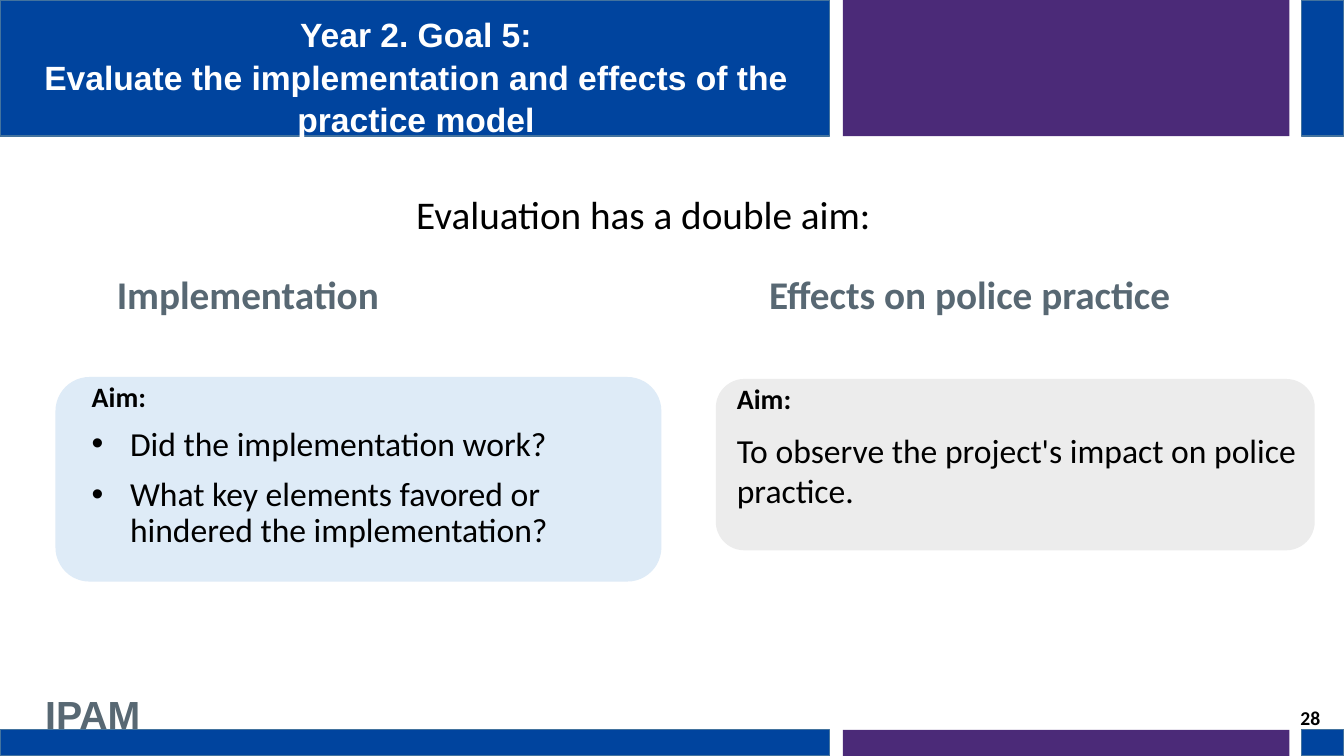
from dataclasses import dataclass

from lxml import etree
from pptx import Presentation, util as u
from pptx.dml import color
from pptx.enum import shapes, text
from pptx.oxml import ns

PX = 9144  # EMU in one px, at 100 px to the inch


@dataclass(frozen=True)
class Theme:
    blue: str = "00449E"
    edge: str = "43739E"
    plum: str = "4B2A78"
    slate: str = "586873"
    pale: str = "DEEBF7"
    grey: str = "ECECEC"
    black: str = "000000"
    white: str = "FFFFFF"
    sans: str = "Arial"
    main: str = "Calibri"
    head: int = 28
    large: int = 24
    label: int = 20
    small: int = 14


def apply(item, values):
    for name, value in values.items():
        setattr(item, name, value)


def rgb(code):
    return color.RGBColor.from_string(code)


class Deck:
    def __init__(self, theme):
        self.theme = theme
        self.file = Presentation()
        apply(self.file, {"slide_width": 1333 * PX, "slide_height": 750 * PX})
        self.slide = self.file.slides.add_slide(self.file.slide_layouts[1])

    def block(self, box, fill, edge=None, kind=shapes.MSO_SHAPE.RECTANGLE):
        shape = self.slide.shapes.add_shape(kind, *(n * PX for n in box))
        shape.shadow.inherit = False
        shape.fill.solid()
        shape.fill.fore_color.rgb = rgb(fill)
        if edge:
            shape.line.color.rgb = rgb(edge)
            shape.line.width = u.Pt(1)
        else:
            shape.line.fill.background()

    def panel(self, box, fill):
        self.block(box, fill, kind=shapes.MSO_SHAPE.ROUNDED_RECTANGLE)

    def label(self, box, lines, holder=None, **para):
        """Put (words, format) lines in a new text box, or in a placeholder moved to the front."""
        left, top, width, height = (n * PX for n in box)
        if holder is None:
            holder = self.slide.shapes.add_textbox(left, top, width, height)
        else:
            apply(holder, {"left": left, "top": top, "width": width, "height": height})
            self.slide.shapes.element.append(holder.element)
        frame = holder.text_frame
        apply(frame, {"word_wrap": True, "auto_size": text.MSO_AUTO_SIZE.NONE,
                      "vertical_anchor": text.MSO_ANCHOR.TOP})
        for i, (words, style) in enumerate(lines):
            line = frame.add_paragraph() if i else frame.paragraphs[0]
            apply(line, {"alignment": text.PP_ALIGN.LEFT, **para})
            self.mark(line, style.get("bullet"))
            run = line.add_run()
            run.text = words
            apply(run.font, {"name": style.get("face", self.theme.main),
                             "size": u.Pt(style["size"]),
                             "bold": style.get("bold", False)})
            run.font.color.rgb = rgb(style.get("ink", self.theme.black))

    def mark(self, line, bullet):
        """Set the hanging indent and bullet, or clear both."""
        props = line._p.get_or_add_pPr()
        step = 38 * PX if bullet else 0
        props.set("marL", str(step))
        props.set("indent", str(-step))
        if bullet:
            font = etree.SubElement(props, ns.qn("a:buFont"))
            font.set("typeface", self.theme.sans)
            etree.SubElement(props, ns.qn("a:buChar")).set("char", bullet)
        else:
            etree.SubElement(props, ns.qn("a:buNone"))

    def bands(self, top, height):
        look = self.theme
        for left, width, fill, edge in ((0, 823, look.blue, look.edge),
                                        (1291, 42, look.blue, look.edge),
                                        (836, 443, look.plum, None)):
            self.block((left, top, width, height), fill, edge)


def main():
    look = Theme()
    deck = Deck(look)
    title, body = deck.slide.placeholders
    head = {"size": look.head, "bold": True, "ink": look.slate}
    aim = {"size": look.label, "bold": True}
    plain = {"size": look.large}
    point = {**plain, "bullet": "•"}
    banner = {**plain, "bold": True, "face": look.sans, "ink": look.white}

    deck.bands(0, 135)
    deck.bands(724, 26)
    deck.label((35, 680, 118, 57), [("IPAM", {**head, "face": look.sans})])
    deck.label((14, 7, 797, 131),
               [("Year 2. Goal 5:", banner),
                ("Evaluate the implementation and effects of the practice model", banner)],
               title, alignment=text.PP_ALIGN.CENTER, line_spacing=1.05)

    deck.label((403, 184, 476, 57), [("Evaluation has a double aim:", {"size": look.head})])
    deck.label((106, 263, 479, 57), [("Implementation", head)])
    deck.label((753, 263, 430, 57), [("Effects on police practice", head)])

    deck.panel((55, 374, 601, 203), look.pale)
    deck.label((81, 375, 574, 219),
               [("Aim:", aim),
                ("Did the implementation work?", point),
                ("What key elements favored or hindered the implementation?", point)],
               body, line_spacing=0.9, space_before=u.Pt(10))
    deck.panel((710, 376, 594, 170), look.grey)
    deck.label((721, 374, 585, 151),
               [("Aim:", aim),
                ("To observe the project's impact on police practice.", plain)],
               space_before=u.Pt(10))

    deck.label((1280, 695, 44, 34), [("28", {"size": look.small, "bold": True})])
    deck.file.save("out.pptx")


if __name__ == "__main__":
    main()
